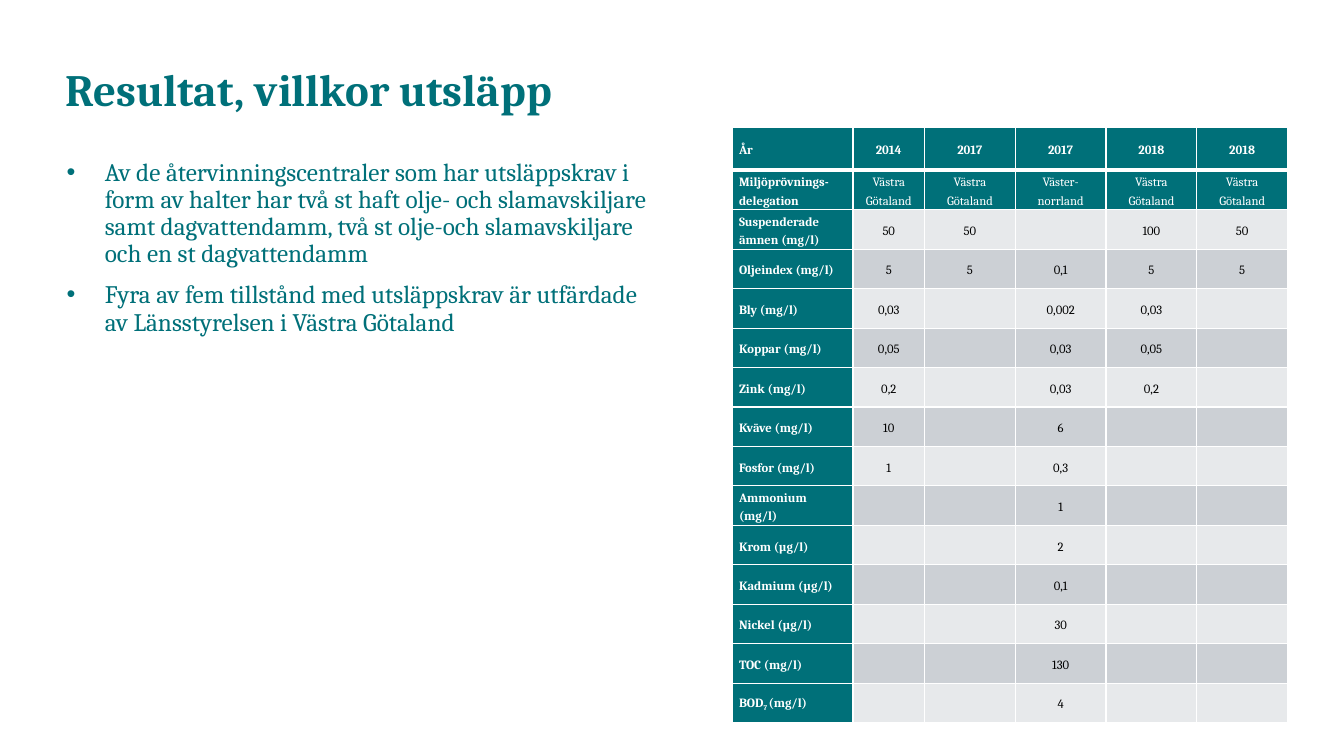
from lxml import etree
from pptx import Presentation
from pptx import util as u
from pptx.dml.color import RGBColor
from pptx.enum import text
from pptx.oxml import ns

PX = u.Inches(1) // 100

BULLETS = [
    "Av de återvinningscentraler som har utsläppskrav i form av halter har två st haft "
    "olje- och slamavskiljare samt dagvattendamm, två st olje-och slamavskiljare och en "
    "st dagvattendamm",
    "Fyra av fem tillstånd med utsläppskrav är utfärdade av Länsstyrelsen i Västra Götaland",
]

COLUMN_WIDTHS = [120, 71, 90, 90, 90, 90]
HEADER_ROWS = 2
LIMITS = [
    ["År", "2014", "2017", "2017", "2018", "2018"],
    ["Miljöprövnings-delegation", "Västra Götaland", "Västra Götaland",
     "Väster-norrland", "Västra Götaland", "Västra Götaland"],
    ["Suspenderade ämnen (mg/l)", "50", "50", "", "100", "50"],
    ["Oljeindex (mg/l)", "5", "5", "0,1", "5", "5"],
    ["Bly (mg/l)", "0,03", "", "0,002", "0,03", ""],
    ["Koppar (mg/l)", "0,05", "", "0,03", "0,05", ""],
    ["Zink (mg/l)", "0,2", "", "0,03", "0,2", ""],
    ["Kväve (mg/l)", "10", "", "6", "", ""],
    ["Fosfor (mg/l)", "1", "", "0,3", "", ""],
    ["Ammonium (mg/l)", "", "", "1", "", ""],
    ["Krom (µg/l)", "", "", "2", "", ""],
    ["Kadmium (µg/l)", "", "", "0,1", "", ""],
    ["Nickel (µg/l)", "", "", "30", "", ""],
    ["TOC (mg/l)", "", "", "130", "", ""],
    [("BOD", "7 ", "(mg/l)"), "", "", "4", "", ""],
]


class SlideBuilder:
    font = "Cambria"
    colors = {"teal": "007079", "white": "FFFFFF", "black": "000000",
              "light": "E7E9EB", "dark": "CCD0D5"}

    def __init__(self, slide):
        self.slide = slide

    def rgb(self, color):
        return RGBColor.from_string(self.colors[color])

    def place(self, shape, left, top, width, height):
        shape.left, shape.top = left * PX, top * PX
        shape.width, shape.height = width * PX, height * PX

    def add_run(self, paragraph, words, size, color, bold=False, subscript=False):
        run = paragraph.add_run()
        run.text = words
        run.font.name = self.font
        run.font.size = u.Pt(size)
        run.font.bold = bold
        run.font.color.rgb = self.rgb(color)
        if subscript:
            run.font._element.set("baseline", "-25000")

    def title(self, words, *box):
        shape = self.slide.shapes.title
        self.place(shape, *box)
        frame = shape.text_frame
        frame.auto_size = text.MSO_AUTO_SIZE.NONE
        frame.vertical_anchor = text.MSO_ANCHOR.MIDDLE
        paragraph = frame.paragraphs[0]
        paragraph.alignment = text.PP_ALIGN.LEFT
        paragraph.line_spacing = 0.9
        self.add_run(paragraph, words, 32, "teal", bold=True)

    def bullet_list(self, items, *box):
        shape = self.slide.placeholders[1]
        self.place(shape, *box)
        frame = shape.text_frame
        frame.auto_size = text.MSO_AUTO_SIZE.NONE
        for index, item in enumerate(items):
            paragraph = frame.add_paragraph() if index else frame.paragraphs[0]
            paragraph.line_spacing = 0.9
            paragraph.space_before = u.Pt(10 if index else 0)
            properties = paragraph._p.get_or_add_pPr()
            properties.set("marL", str(38 * PX))
            properties.set("indent", str(-38 * PX))
            font = etree.SubElement(properties, ns.qn("a:buFont"))
            font.set("typeface", "Arial")
            etree.SubElement(properties, ns.qn("a:buChar")).set("char", "•")
            self.add_run(paragraph, item, 18, "teal")

    def cell_borders(self, cell, **widths):
        """Draw white borders; widths gives the points of sides other than 1 pt."""
        properties = cell._tc.get_or_add_tcPr()
        for position, side in enumerate("LRTB"):
            line = etree.Element(ns.qn(f"a:ln{side}"), w=str(u.Pt(widths.get(side, 1))))
            fill = etree.SubElement(line, ns.qn("a:solidFill"))
            etree.SubElement(fill, ns.qn("a:srgbClr")).set("val", self.colors["white"])
            properties.insert(position, line)

    def cell(self, cell, content, fill, color, bold, centred):
        """Fill a cell; the second part of a tuple is set as subscript."""
        cell.fill.solid()
        cell.fill.fore_color.rgb = self.rgb(fill)
        cell.margin_left = cell.margin_right = 7 * PX
        cell.margin_top = cell.margin_bottom = 0
        cell.vertical_anchor = text.MSO_ANCHOR.MIDDLE
        paragraph = cell.text_frame.paragraphs[0]
        paragraph.alignment = text.PP_ALIGN.CENTER if centred else text.PP_ALIGN.LEFT
        paragraph.line_spacing = u.Pt(13)
        paragraph.space_after = u.Pt(6.5)
        parts = content if isinstance(content, tuple) else (content,)
        for index, part in enumerate(parts):
            if part:
                self.add_run(paragraph, part, 9, color, bold, subscript=index == 1)

    def table(self, rows, widths, left, top, height, first_height):
        frame = self.slide.shapes.add_table(
            len(rows), len(widths), left * PX, top * PX, sum(widths) * PX, height * PX)
        table = frame.table
        table.horz_banding = False
        for column, width in zip(table.columns, widths):
            column.width = width * PX
        for row in table.rows:
            row.height = (height - first_height) * PX // (len(rows) - 1)
        table.rows[0].height = first_height * PX

        for r, values in enumerate(rows):
            for c, value in enumerate(values):
                heading = r < HEADER_ROWS or c == 0
                band = "dark" if r % 2 else "light"
                cell = table.cell(r, c)
                self.cell(cell, value, fill="teal" if heading else band,
                          color="white" if heading else "black",
                          bold=r == 0 or c == 0, centred=c > 0)
                self.cell_borders(cell, T=3 if r == 1 else 1, B=3 if r == 0 else 1)


def main():
    presentation = Presentation()
    presentation.slide_width = u.Inches(13.33)
    presentation.slide_height = u.Inches(7.5)
    builder = SlideBuilder(presentation.slides.add_slide(presentation.slide_layouts[1]))
    builder.title("Resultat, villkor utsläpp", 55, 56, 767, 70)
    builder.bullet_list(BULLETS, 56, 153, 610, 466)
    builder.table(LIMITS, COLUMN_WIDTHS, left=726, top=126, height=591, first_height=43)
    presentation.save("out.pptx")


if __name__ == "__main__":
    main()
